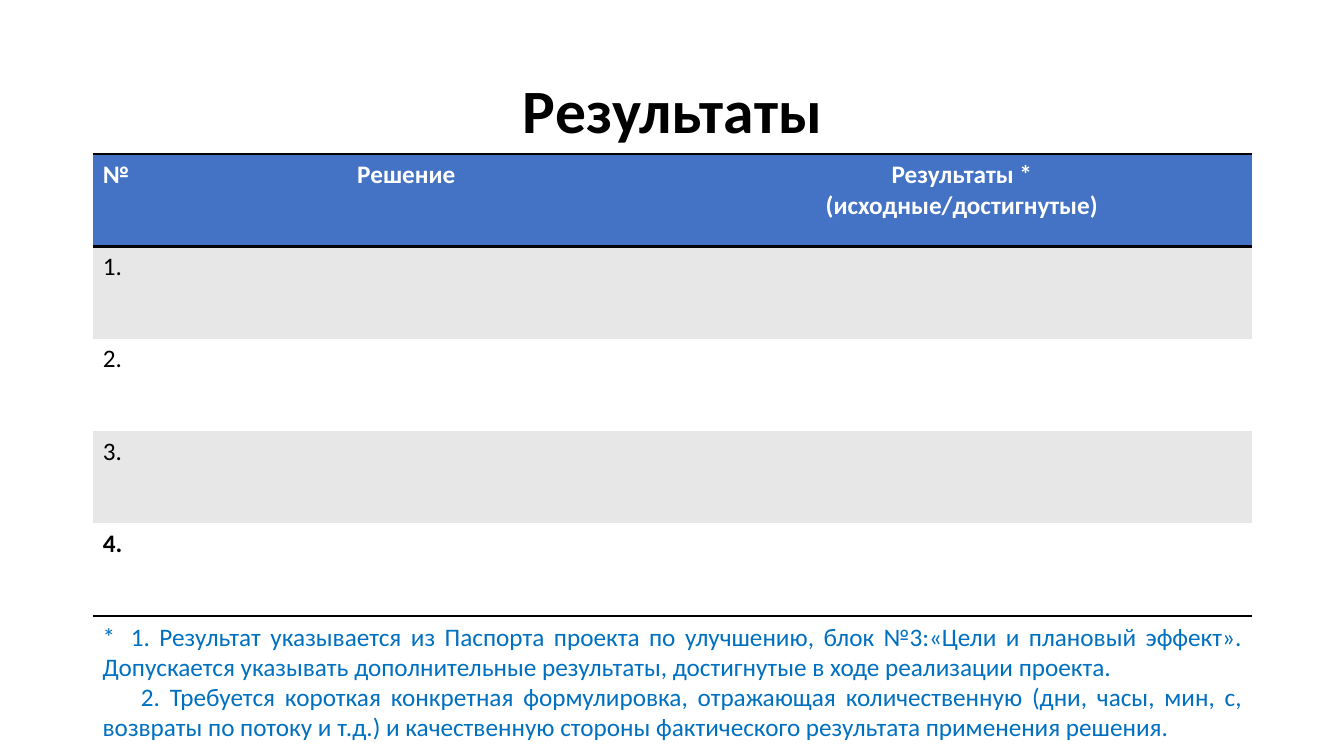
from dataclasses import dataclass

from lxml.etree import SubElement
from pptx import Presentation
from pptx.dml.color import RGBColor
from pptx.enum.text import MSO_ANCHOR, MSO_AUTO_SIZE, PP_ALIGN
from pptx.oxml.ns import qn
from pptx.util import Inches, Pt

BLACK = RGBColor(0x00, 0x00, 0x00)
WHITE = RGBColor(0xFF, 0xFF, 0xFF)
HEADER_BLUE = RGBColor(0x44, 0x72, 0xC4)
BAND_GREY = RGBColor(0xE7, 0xE7, 0xE7)
NOTE_BLUE = RGBColor(0x00, 0x70, 0xC0)

FONT = "Calibri"
NO_STYLE_NO_GRID = "{2D5ABB26-0587-4C30-8999-92F81FD0307C}"
LEFT, WIDTH = Inches(0.92), Inches(11.5)
TABLE_TOP, TABLE_HEIGHT = Inches(1.53), Inches(4.58)
COLUMN_WIDTHS = (0.48, 5.26, 5.76)


@dataclass(frozen=True)
class TableRow:
    cells: tuple[str, ...]
    fill: RGBColor
    color: RGBColor = BLACK
    bold: bool = False
    borders: tuple[str, ...] = ()


@dataclass(frozen=True)
class Footnote:
    text: str
    indent: float = 0
    tab_stop: float = 0


ROWS = (
    TableRow(("№", "Решение", "Результаты *\n(исходные/достигнутые)"),
             HEADER_BLUE, WHITE, True, ("a:lnT", "a:lnB")),
    TableRow(("1.", "", ""), BAND_GREY),
    TableRow(("2.", "", ""), WHITE),
    TableRow(("3.", "", ""), BAND_GREY),
    TableRow(("4.", "", ""), WHITE, bold=True, borders=("a:lnB",)),
)

FOOTNOTES = (
    Footnote("*\t1. Результат указывается из Паспорта проекта по улучшению, "
             "блок №3:«Цели и плановый эффект». Допускается указывать "
             "дополнительные результаты, достигнутые в ходе реализации проекта.",
             tab_stop=0.28),
    Footnote("2. Требуется короткая конкретная формулировка, отражающая "
             "количественную (дни, часы, мин, с, возвраты по потоку и т.д.) и "
             "качественную стороны фактического результата применения решения.",
             indent=0.38),
)


def add_text(paragraph, text: str, color: RGBColor, align: PP_ALIGN,
             size: int = 18, bold: bool = False) -> None:
    paragraph.alignment = align
    run = paragraph.add_run()
    run.text = text
    run.font.name = FONT
    run.font.size = Pt(size)
    run.font.bold = bold
    run.font.color.rgb = color


def paragraph_at(frame, index: int):
    return frame.add_paragraph() if index else frame.paragraphs[0]


def add_border(cell, side: str) -> None:
    line = SubElement(cell._tc.get_or_add_tcPr(), qn(side), w=str(Pt(2)))
    fill = SubElement(line, qn("a:solidFill"))
    SubElement(fill, qn("a:srgbClr"), val=str(BLACK))


def fill_row(table, index: int, row: TableRow) -> None:
    for column, text in enumerate(row.cells):
        cell = table.cell(index, column)
        for side in row.borders:
            add_border(cell, side)
        cell.fill.solid()
        cell.fill.fore_color.rgb = row.fill
        align = PP_ALIGN.CENTER if column else PP_ALIGN.LEFT
        if text:
            for number, line in enumerate(text.split("\n")):
                add_text(paragraph_at(cell.text_frame, number), line,
                         row.color, align, bold=row.bold)


def add_results_table(slide) -> None:
    frame = slide.shapes.add_table(len(ROWS), len(COLUMN_WIDTHS),
                                   LEFT, TABLE_TOP, WIDTH, TABLE_HEIGHT)
    table = frame.table
    table._tbl.tblPr.find(qn("a:tableStyleId")).text = NO_STYLE_NO_GRID
    for column, width in zip(table.columns, COLUMN_WIDTHS):
        column.width = Inches(width)
    for index, row in enumerate(ROWS):
        table.rows[index].height = TABLE_HEIGHT // len(ROWS)
        fill_row(table, index, row)


def add_footnotes(slide) -> None:
    notes = slide.shapes.add_textbox(LEFT, TABLE_TOP + TABLE_HEIGHT,
                                     WIDTH, Inches(1.31)).text_frame
    notes.word_wrap = True
    notes.auto_size = MSO_AUTO_SIZE.SHAPE_TO_FIT_TEXT
    for index, note in enumerate(FOOTNOTES):
        paragraph = paragraph_at(notes, index)
        add_text(paragraph, note.text, NOTE_BLUE, PP_ALIGN.JUSTIFY)
        properties = paragraph._p.get_or_add_pPr()
        if note.indent:
            properties.set("indent", str(Inches(note.indent)))
        if note.tab_stop:
            stops = SubElement(properties, qn("a:tabLst"))
            SubElement(stops, qn("a:tab"), pos=str(Inches(note.tab_stop)), algn="l")


def add_title(slide) -> None:
    title = slide.shapes.title
    title.left, title.top = LEFT, Inches(0.4)
    title.width, title.height = WIDTH, Inches(1.45)
    title.text_frame.vertical_anchor = MSO_ANCHOR.MIDDLE
    heading = title.text_frame.paragraphs[0]
    heading.line_spacing = 0.9
    add_text(heading, "Результаты", BLACK, PP_ALIGN.CENTER, 44, True)


def main() -> None:
    presentation = Presentation()
    presentation.slide_width = Inches(13.33)
    presentation.slide_height = Inches(7.5)
    # "Title Only" layout
    slide = presentation.slides.add_slide(presentation.slide_layouts[5])
    add_title(slide)
    add_results_table(slide)
    add_footnotes(slide)
    presentation.save("out.pptx")


if __name__ == "__main__":
    main()
